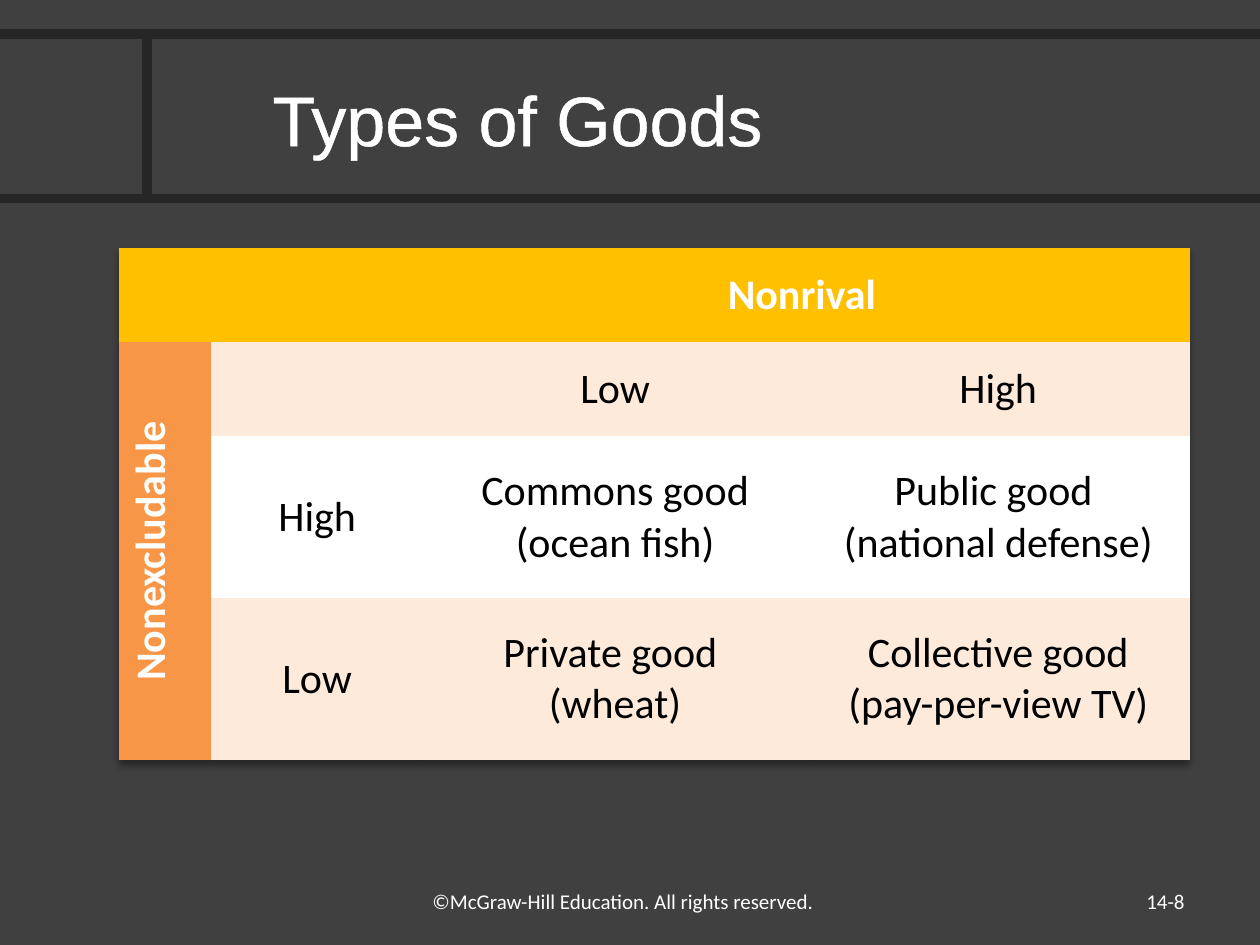
"""Build the Types of Goods slide."""
from lxml import etree
from pptx import Presentation, oxml
from pptx.dml import color
from pptx.enum import shapes, text
from pptx.oxml import ns
from pptx.util import Pt

HUES = {"back": "404040", "rule": "262626", "white": "FFFFFF", "black": "000000",
        "gold": "FFC000", "side": "F79646", "tint": "FDEADA"}
RULES = [(0, 113.5, 720, 113.5), (84, 19.5, 84, 113.5), (0, 19.5, 720, 19.5)]
COLS = [52.5, 121.5, 219, 219]
ROWS = [53.75, 53.75, 92.5, 92.5]
GRID = [["", "", "Nonrival ", ""],
        ["Nonexcludable", "", "Low", "High"],
        ["", "High", "Commons good\v(ocean fish)", "Public good \v(national defense)"],
        ["", "Low", "Private good \v(wheat)", "Collective good\v(pay-per-view TV)"]]
BANDS = ["gold", "tint", "white", "tint"]
NOTES = [("©McGraw-Hill Education. All rights reserved.", (240, 504, 240, 25), "LEFT", "TOP"),
         ("14-8", (516, 500.5, 168, 28.5), "RIGHT", "MIDDLE")]
A = f'xmlns:a="{ns.nsuri("a")}"'
GLOW = (f'<a:effectLst {A}><a:outerShdw blurRad="50800" dist="38100" dir="5400000" '
        'algn="t" rotWithShape="0"><a:srgbClr val="000000"><a:alpha val="40000"/>'
        '</a:srgbClr></a:outerShdw></a:effectLst>')
EDGE = f'<a:ln {A} w="18415"><a:solidFill><a:srgbClr val="FFFFFF"/></a:solidFill></a:ln>'


def hue(name):
    """Return the named colour."""
    return color.RGBColor.from_string(HUES[name])


def write(frame, words, size=24, face="Calibri", ink="white", bold=False, align="CENTER"):
    """Put one formatted paragraph in a text frame."""
    para = frame.paragraphs[0]
    para.text = words
    para.alignment = getattr(text.PP_ALIGN, align)
    for run in para.runs:
        font = run.font
        font.size, font.name, font.bold = Pt(size), face, bold
        font.color.rgb = hue(ink)


def rule(slide, ends):
    """Draw one heavy rule."""
    line = slide.shapes.add_connector(shapes.MSO_CONNECTOR.STRAIGHT, *map(Pt, ends))
    line.line.color.rgb = hue("rule")
    line.line.width = Pt(5.5)
    etree.SubElement(line.element.spPr, ns.qn("a:effectLst"))


def head(slide):
    """Fill and place the title."""
    box = slide.shapes.title
    box.left, box.top, box.width, box.height = map(Pt, (148.5, 21.5, 472.5, 92))
    box.text_frame.vertical_anchor = text.MSO_ANCHOR.MIDDLE
    write(box.text_frame, "Types of Goods", size=40, face="Arial", align="LEFT")
    for props in box.element.iter(ns.qn("a:rPr")):
        props.insert(0, oxml.parse_xml(EDGE))


def table(slide):
    """Build the goods table."""
    frame = slide.shapes.add_table(len(ROWS), len(COLS), Pt(68), Pt(141.75),
                                   Pt(sum(COLS)), Pt(sum(ROWS)))
    grid = frame.table
    grid.first_row = grid.horz_banding = False
    props = frame.element.find(".//" + ns.qn("a:tblPr"))
    props.find(ns.qn("a:tableStyleId")).text = "{2D5ABB26-0587-4C30-8999-92F81FD0307C}"
    props.insert(0, oxml.parse_xml(GLOW))
    for col, wide in zip(grid.columns, COLS):
        col.width = Pt(wide)
    for row, tall in zip(grid.rows, ROWS):
        row.height = Pt(tall)
    grid.cell(0, 2).merge(grid.cell(0, 3))
    grid.cell(1, 0).merge(grid.cell(3, 0))
    for r, line in enumerate(GRID):
        for c, words in enumerate(line):
            cell = grid.cell(r, c)
            lead = r == 0 or c == 0
            cell.fill.solid()
            cell.fill.fore_color.rgb = hue("side" if r and not c else BANDS[r])
            cell.vertical_anchor = text.MSO_ANCHOR.MIDDLE
            if words:
                write(cell.text_frame, words, ink="white" if lead else "black", bold=lead)
    grid.cell(1, 0).fill.solid()
    side = frame.element.findall(".//" + ns.qn("a:tcPr"))[len(COLS)]
    side.set("vert", "vert270")
    grid.cell(1, 0).fill.fore_color.rgb = hue("side")


def note(slide, words, area, align, anchor):
    """Add one footer text."""
    frame = slide.shapes.add_textbox(*map(Pt, area)).text_frame
    frame.word_wrap = True
    frame.vertical_anchor = getattr(text.MSO_ANCHOR, anchor)
    write(frame, words, size=12, align=align)


def main():
    """Make the slide and save it."""
    deck = Presentation()
    deck.slide_width, deck.slide_height = Pt(720), Pt(540)
    slide = deck.slides.add_slide(deck.slide_layouts[5])
    slide.background.fill.solid()
    slide.background.fill.fore_color.rgb = hue("back")
    for ends in RULES:
        rule(slide, ends)
    head(slide)
    table(slide)
    for item in NOTES:
        note(slide, *item)
    deck.save("out.pptx")


if __name__ == "__main__":
    main()
